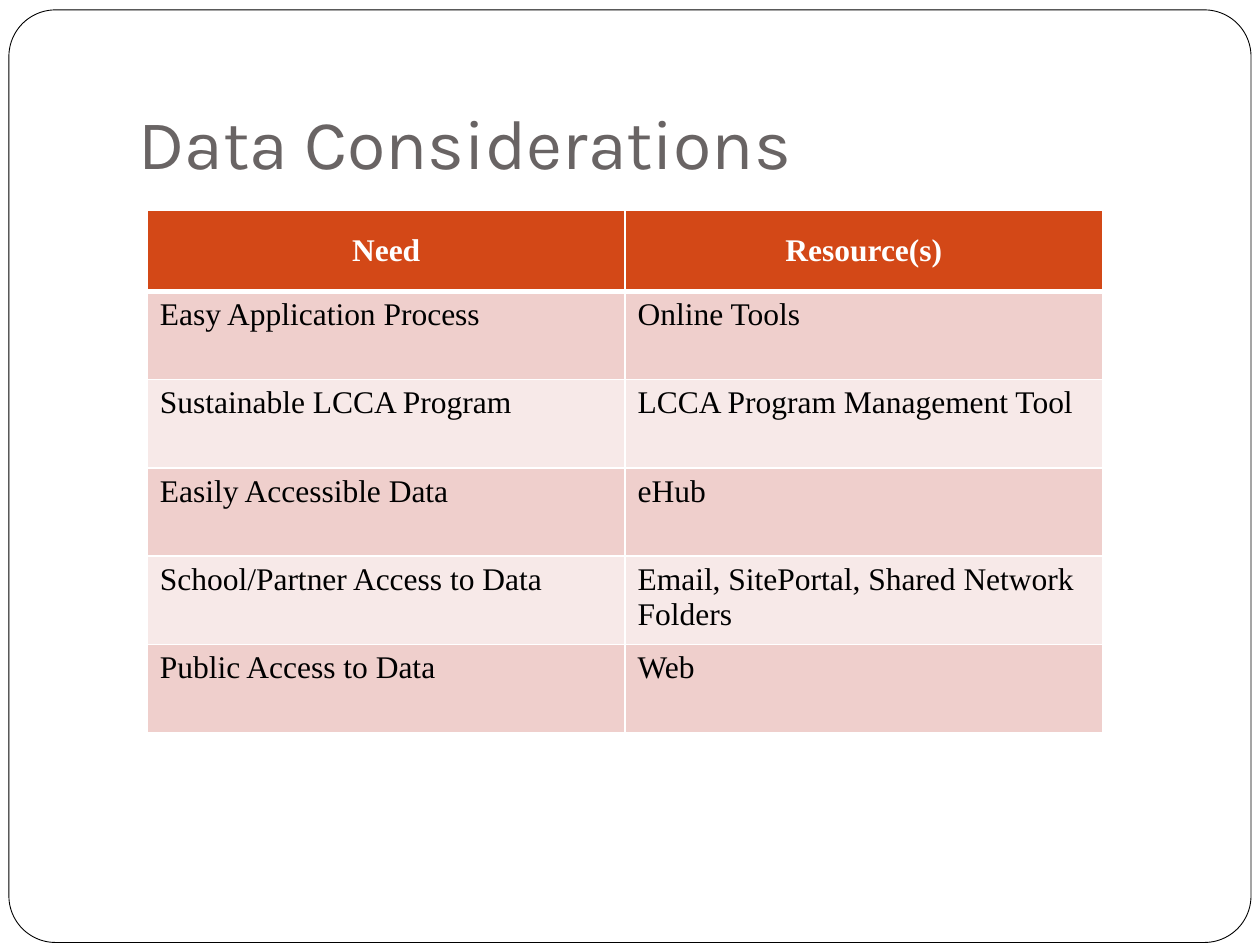
from lxml.etree import SubElement
from pptx import Presentation
from pptx.dml.color import RGBColor
from pptx.enum.shapes import MSO_SHAPE
from pptx.enum.text import MSO_ANCHOR, MSO_AUTO_SIZE, PP_ALIGN
from pptx.oxml import parse_xml
from pptx.oxml.ns import nsdecls, qn
from pptx.util import Cm, Pt

WHITE = RGBColor(0xFF, 0xFF, 0xFF)
BLACK = RGBColor(0, 0, 0)
GRAY = RGBColor(0x69, 0x64, 0x64)
ORANGE = RGBColor(0xD3, 0x48, 0x17)
ROSE = RGBColor(0xEF, 0xCF, 0xCC)
PALE_ROSE = RGBColor(0xF7, 0xE9, 0xE8)

NEEDS = [
    ("Need", "Resource(s)"),
    ("Easy Application Process", "Online Tools"),
    ("Sustainable LCCA Program", "LCCA Program Management Tool"),
    ("Easily Accessible Data", "eHub"),
    ("School/Partner Access to Data", "Email, SitePortal, Shared Network Folders"),
    ("Public Access to Data", "Web"),
]


class SlideBuilder:
    title_font = "Karla"
    body_font = "Times New Roman"

    def __init__(self, slide):
        self.slide = slide

    def style(self, paragraph, name, size, color, bold=False):
        font = paragraph.font
        font.name, font.size, font.bold = name, Pt(size), bold
        font.color.rgb = color

    def frame(self, left, top, width, height):
        border = self.slide.shapes.add_shape(
            MSO_SHAPE.ROUNDED_RECTANGLE, Cm(left), Cm(top), Cm(width), Cm(height))
        border.adjustments[0] = 0.05
        border.shadow.inherit = False
        border.fill.solid()
        border.fill.fore_color.rgb = WHITE
        border.line.color.rgb = BLACK
        border.line.width = Pt(0.5)
        self.slide.shapes.title.element.addprevious(border.element)

    def title(self, text, left, top, width, height):
        heading = self.slide.shapes.title
        heading.left, heading.top = Cm(left), Cm(top)
        heading.width, heading.height = Cm(width), Cm(height)
        body = heading.text_frame
        body.text = text
        body.auto_size = MSO_AUTO_SIZE.NONE
        body.vertical_anchor = MSO_ANCHOR.BOTTOM
        body.margin_bottom = Cm(0.25)
        body.paragraphs[0].alignment = PP_ALIGN.LEFT
        self.style(body.paragraphs[0], self.title_font, 40, GRAY)

    def cell_borders(self, cell, widths):
        properties = cell._tc.get_or_add_tcPr()
        for position, (side, width) in enumerate(widths.items()):
            line = parse_xml(f'<a:ln{side} {nsdecls("a")} w="{Pt(width)}"/>')
            fill = SubElement(line, qn("a:solidFill"))
            SubElement(fill, qn("a:srgbClr"), val=str(WHITE))
            properties.insert(position, line)

    def table(self, rows, left, top, column_width, header_height, row_height):
        columns = len(rows[0])
        height = header_height + row_height * (len(rows) - 1)
        grid = self.slide.shapes.add_table(
            len(rows), columns, Cm(left), Cm(top),
            Cm(column_width * columns), Cm(height)).table
        for column in grid.columns:
            column.width = Cm(column_width)
        for r, texts in enumerate(rows):
            header = r == 0
            grid.rows[r].height = Cm(header_height if header else row_height)
            for c, text in enumerate(texts):
                cell = grid.cell(r, c)
                cell.text = text
                cell.fill.solid()
                cell.fill.fore_color.rgb = ORANGE if header else (PALE_ROSE, ROSE)[r % 2]
                cell.vertical_anchor = MSO_ANCHOR.MIDDLE if header else MSO_ANCHOR.TOP
                paragraph = cell.text_frame.paragraphs[0]
                paragraph.alignment = PP_ALIGN.CENTER if header else PP_ALIGN.LEFT
                self.style(paragraph, self.body_font, 18, WHITE if header else BLACK, header)
                self.cell_borders(cell, {"L": 1, "R": 1, "T": 3 if r == 1 else 1,
                                         "B": 3 if header else 1})


def main():
    deck = Presentation()
    deck.slide_width, deck.slide_height = Cm(25.4), Cm(19.05)
    builder = SlideBuilder(deck.slides.add_slide(deck.slide_layouts[5]))
    builder.frame(0.18, 0.2, 25.04, 18.8)
    builder.title("Data Considerations", 2.54, 0.76, 21.59, 3.18)
    builder.table(NEEDS, 2.97, 4.24, 9.63, 1.63, 1.78)
    deck.save("out.pptx")


if __name__ == "__main__":
    main()
